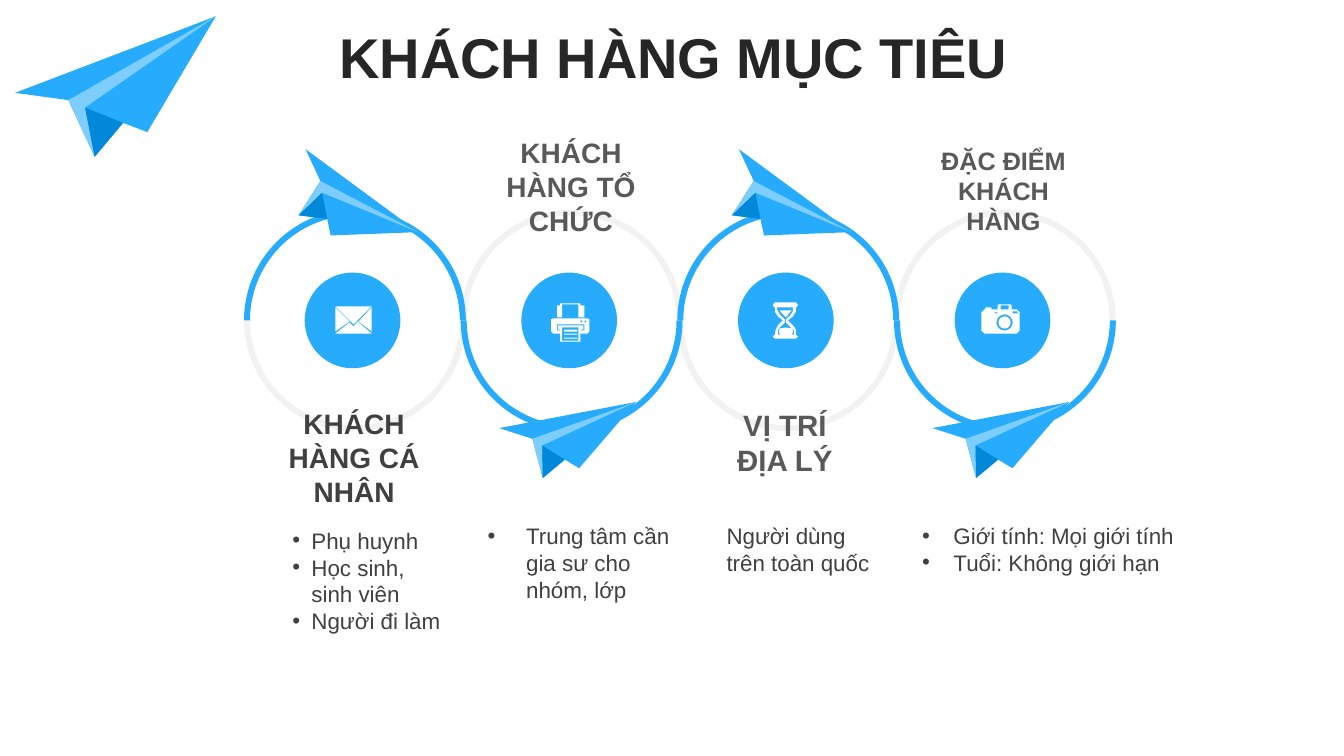
from math import cos, pi, sin

from lxml.etree import SubElement
from pptx import Presentation
from pptx.dml.color import RGBColor
from pptx.enum.shapes import MSO_SHAPE
from pptx.enum.text import MSO_ANCHOR, PP_ALIGN
from pptx.oxml.ns import qn
from pptx.util import Cm, Pt

BLUE = RGBColor(0x27, 0xAC, 0xFD)
PALE = RGBColor(0x7D, 0xCD, 0xFE)
DEEP = RGBColor(0x02, 0x88, 0xD9)
WHITE = RGBColor(0xFF, 0xFF, 0xFF)
MIST = RGBColor(0xF2, 0xF2, 0xF2)
BLACK = RGBColor(0x26, 0x26, 0x26)
DARK = RGBColor(0x40, 0x40, 0x40)
GRAY = RGBColor(0x59, 0x59, 0x59)

PITCH, RING, BAND, DOT = 5.46, 5.59, 0.15, 2.41
GRID = 2.54 / 100


def oval(x, y, r, start=0, sweep=2 * pi, steps=32):
    """Return points along an arc around a centre."""
    turns = [start + sweep * i / steps for i in range(steps + 1)]
    return [(x + r * cos(t), y + r * sin(t)) for t in turns]


def rect(x1, y1, x2, y2):
    """Return the corners of a rectangle."""
    return [(x1, y1), (x2, y1), (x2, y2), (x1, y2)]


MAIL = [
    [(5, 1), (19, 13), (-17, 13), (-3, 2), (1, 6)],
    [(19, -13), (19, 11), (6, 1)],
    [(-17, -13), (-3, 1), (-17, 11)],
    [(-17, -14), (19, -14), (1, 4)],
]
PRINTER = [
    [(-18, -1), (-16, -2), (18, -2), (20, -1), (20, 11), (18, 13), (11, 13),
     (11, 21), (-9, 21), (-9, 13), (-16, 13), (-18, 11)],
    rect(-7, 7, 9, 20), rect(-5, 9, 8, 11), rect(-5, 13, 8, 14), rect(-5, 17, 8, 18),
    [(-12, 4), (-12, 10), (-9, 10), (-9, 9), (-11, 9), (-11, 5),
     (14, 5), (14, 9), (11, 9), (11, 10), (15, 10), (15, 4)],
    oval(12, 1, 1), oval(16, 1, 1),
    [(-12, -3), (-12, -15), (-9, -15), (-9, -17), (11, -17), (11, -15),
     (15, -15), (15, -3), (9, -3), (9, -16), (-7, -16), (-7, -3)],
]
GLASS = [
    [(-11, -18), (10, -18), (12, -15), (10, -13), (10, -9), (7, -4), (2, 0),
     (7, 5), (10, 9), (10, 14), (12, 16), (10, 18), (-11, 18), (-13, 16),
     (-11, 14), (-10, 9), (-8, 5), (-3, 0), (-8, -4), (-11, -9), (-11, -13), (-13, -15)],
    [(-9, -13), (-8, -9), (-6, -6), (-1, -1), (-1, 2), (-6, 7), (-8, 10), (-8, 14),
     (8, 14), (8, 10), (5, 7), (0, 2), (0, -1), (5, -6), (7, -9), (7, -13)],
    [(-6, -10), (6, -10), (4, -8), (0, -3), (-5, -8)],
    [(0, 7), (6, 8), (7, 11), (6, 14), (-6, 14), (-7, 11), (-6, 8)],
]
CAMERA = [
    [(-21, -8), (-18, -11), (-17, -11), (-17, -13), (-11, -13), (-11, -11), (-5, -11),
     (-5, -15), (-4, -16), (8, -16), (9, -15), (9, -11), (14, -11), (17, -8),
     (17, 10), (14, 13), (-18, 13), (-21, 10)],
    rect(-2, -15, 6, -11), rect(10, -9, 15, -7), rect(-8, -8, -5, -7),
    oval(2, 2, 8), oval(2, 2, 6),
]
PLANE = [
    (BLUE, [(0, 0), (1, 0), (0.51, 0.39), (0.42, 0.31), (0.24, 0.41), (0.22, 0.12)]),
    (PALE, [(1, 0), (0.22, 0.12), (0.24, 0.41), (0.28, 0.18)]),
    (DEEP, [(0.42, 0.31), (0.24, 0.41), (0.28, 0.18)]),
]
STEPS = [
    (MAIL, "KHÁCH HÀNG CÁ NHÂN", 20, DARK, (0.64, 4.85, 4.27, 3.84),
     ["Phụ huynh", "Học sinh, sinh viên", "Người đi làm"], (0.97, 7.87, 4.5, 3), 0.48),
    (PRINTER, "KHÁCH HÀNG TỔ CHỨC", 20, GRAY, (0.76, -1.98, 4.04, 3.84),
     ["Trung tâm cần gia sư cho nhóm, lớp"], (0.43, 7.75, 5.18, 2.31), 0.97),
    (GLASS, "VỊ TRÍ ĐỊA LÝ", 21, GRAY, (0.69, 4.85, 4.04, 3.07),
     ["Người dùng trên toàn quốc"], (0.99, 7.75, 4.5, 1.63), 0),
    (CAMERA, "ĐẶC ĐIỂM KHÁCH HÀNG", 18, GRAY, (0.74, -1.75, 4.04, 2.57),
     ["Giới tính: Mọi giới tính", "Tuổi: Không giới hạn"], (0.46, 7.75, 7.04, 1.63), 0.79),
]


def paint(shape, color):
    """Give a shape a flat fill without line or shadow."""
    shape.shadow.inherit = False
    shape.fill.solid()
    shape.fill.fore_color.rgb = color
    shape.line.fill.background()


def outline(slide, loops, color):
    """Draw closed loops of points as one shape."""
    loops = [[(Cm(x), Cm(y)) for x, y in loop] for loop in loops]
    pen = slide.shapes.build_freeform(*loops[0][0])
    for i, loop in enumerate(loops):
        if i:
            pen.move_to(*loop[0])
        pen.add_line_segments(loop[1:], close=True)
    paint(pen.convert_to_shape(), color)


def preset(slide, kind, box, color):
    """Add a flat preset shape in a box."""
    shape = slide.shapes.add_shape(kind, *map(Cm, box))
    paint(shape, color)
    return shape


def write(slide, box, lines, size, color, bold=False, align=None, indent=0):
    """Add wrapped paragraphs, bulleted when indented."""
    frame = slide.shapes.add_textbox(*map(Cm, box)).text_frame
    frame.word_wrap = True
    frame.text = "\n".join(lines)
    for para in frame.paragraphs:
        font = para.font
        font.name, font.size, font.bold = "Arial", Pt(size), bold
        font.color.rgb = color
        para.alignment = align
        if indent:
            props = para._p.get_or_add_pPr()
            props.set("marL", str(Cm(indent)))
            props.set("indent", str(-Cm(indent)))
            SubElement(props, qn("a:buFont")).set("typeface", "Arial")
            SubElement(props, qn("a:buChar")).set("char", "•")
    return frame


def plane(slide, tail, nose):
    """Draw a paper plane from its tail to its nose."""
    (x, y), (dx, dy) = tail, (nose[0] - tail[0], nose[1] - tail[1])
    for color, spots in PLANE:
        outline(slide, [[(x + u * dx - v * dy, y + u * dy + v * dx) for u, v in spots]], color)


def wave(slide, left, top):
    """Draw the pale band along the free half of each ring."""
    half = RING / 2
    edges = [[], []]
    for i in range(len(STEPS)):
        for side, edge in enumerate(edges):
            radius = half - BAND * ((i + side) % 2)
            sweep = pi if i % 2 else -pi
            edge += oval(left + half + i * PITCH, top + half, radius, pi, sweep)
    outline(slide, [edges[0] + edges[1][::-1]], MIST)


def chain(slide, left, top):
    """Draw the four linked rings with planes, headings, icons and notes."""
    wave(slide, left, top)
    spots = [(left + i * PITCH, i % 2) for i in range(len(STEPS))]
    for x, low in spots:
        arc = preset(slide, MSO_SHAPE.BLOCK_ARC, (x, top, RING, RING), BLUE)
        arc.adjustments[2] = 0.027
        arc.rotation = 180 * low
    for x, low in spots:
        tail, nose = ((0.97, 5.51), (4.42, 4.85)) if low else ((1.55, -1.52), (4.39, 0.57))
        plane(slide, (x + tail[0], top + tail[1]), (x + nose[0], top + nose[1]))
    for (x, low), (icon, head, size, color, area, notes, room, indent) in zip(spots, STEPS):
        write(slide, (x + area[0], top + area[1], *area[2:]), [head], size, color,
              True, PP_ALIGN.CENTER)
        midx, midy = x + RING / 2 - 0.06, top + RING / 2
        preset(slide, MSO_SHAPE.OVAL, (midx - DOT / 2, midy - DOT / 2, DOT, DOT), BLUE)
        outline(slide, [[(midx + u * GRID, midy + v * GRID) for u, v in loop]
                        for loop in icon], WHITE)
        write(slide, (x + room[0], top + room[1], *room[2:]), notes, 16, DARK, indent=indent)


def title(slide, box):
    """Write the slide title."""
    frame = write(slide, box, ["KHÁCH HÀNG MỤC TIÊU"], 40, BLACK, True, PP_ALIGN.CENTER)
    frame.vertical_anchor = MSO_ANCHOR.MIDDLE
    para = frame.paragraphs[0]
    para.line_spacing, para.space_before = 0.9, Pt(10)


def main():
    """Build and save the slide."""
    deck = Presentation()
    deck.slide_width, deck.slide_height = Cm(33.87), Cm(19.05)
    slide = deck.slides.add_slide(deck.slide_layouts[6])
    title(slide, (0.89, 0.51, 32.16, 2.01))
    chain(slide, 6.15, 5.28)
    plane(slide, (0.38, 2.34), (5.44, 0.41))
    deck.save("out.pptx")


if __name__ == "__main__":
    main()
